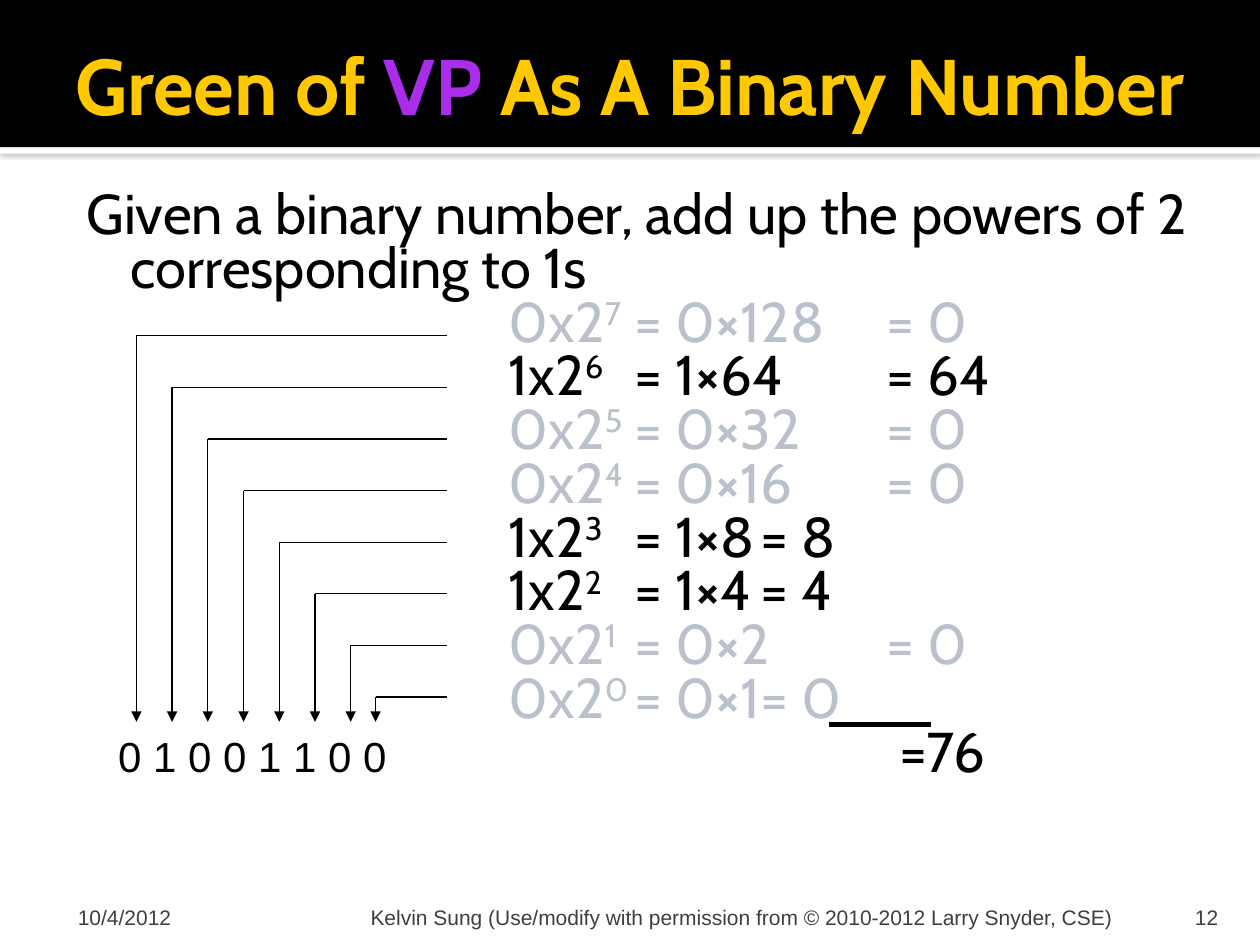
from lxml import etree
from pptx import Presentation, util as u
from pptx.dml.color import RGBColor
from pptx.enum import shapes, text
from pptx.oxml import parse_xml
from pptx.oxml.ns import nsdecls, qn

BLACK = RGBColor(0x00, 0x00, 0x00)
WHITE = RGBColor(0xFF, 0xFF, 0xFF)
GOLD = RGBColor(0xFF, 0xC8, 0x00)
PURPLE = RGBColor(0xA9, 0x2D, 0xEA)
PALE = RGBColor(0xBA, 0xC0, 0xCC)
GREY = RGBColor(0x3F, 0x3F, 0x3F)

BITS = "01001100"
LEAD_TABS = "\t" * 4


def place(shape, left, top, width, height):
    shape.left, shape.top = u.Cm(left), u.Cm(top)
    shape.width, shape.height = u.Cm(width), u.Cm(height)


def set_frame(shape, anchor, insets):
    frame = shape.text_frame
    frame.word_wrap = True
    frame.auto_size = text.MSO_AUTO_SIZE.NONE
    frame.vertical_anchor = anchor
    (frame.margin_left, frame.margin_top,
     frame.margin_right, frame.margin_bottom) = map(u.Cm, insets)
    return frame


def add_run(paragraph, words, size, color, font="Cabin", bold=False, raised=False):
    run = paragraph.add_run()
    run.text = words
    run.font.size, run.font.name, run.font.bold = u.Pt(size), font, bold
    run.font.color.rgb = color
    if raised:
        run._r.get_or_add_rPr().set("baseline", "30000")


def add_band(slide, top, height, color):
    band = slide.shapes.add_shape(shapes.MSO_SHAPE.RECTANGLE, 0, u.Cm(top),
                                  u.Cm(25.4), u.Cm(height))
    band.fill.solid()
    band.fill.fore_color.rgb = color
    band.line.fill.background()
    band.shadow.inherit = False
    return band


def add_soft_shadow(band):
    effects = band._element.spPr.find(qn("a:effectLst"))
    effects.append(parse_xml(
        f'<a:outerShdw {nsdecls("a")} blurRad="{u.Pt(2.5)}" dist="{u.Pt(0.8)}" '
        'dir="5400000" rotWithShape="0"><a:srgbClr val="808080">'
        '<a:alpha val="60000"/></a:srgbClr></a:outerShdw>'))


def add_line(parent, start, end, width=0.75, arrow=False):
    line = parent.shapes.add_connector(shapes.MSO_CONNECTOR.STRAIGHT,
                                       *map(u.Cm, (*start, *end)))
    line.line.color.rgb = BLACK
    line.line.width = u.Pt(width)
    if arrow:
        etree.SubElement(line.line._get_or_add_ln(), qn("a:headEnd"), type="triangle")
    etree.SubElement(line._element.spPr, qn("a:effectLst"))


def add_footer(slide, words, box, insets, align=text.PP_ALIGN.LEFT):
    footer = slide.shapes.add_textbox(*map(u.Cm, box))
    paragraph = set_frame(footer, text.MSO_ANCHOR.BOTTOM, insets).paragraphs[0]
    paragraph.alignment = align
    add_run(paragraph, words, 12, GREY, "Arial")


def format_body_line(paragraph, first_indent=-0.89):
    paragraph.line_spacing = 0.8
    paragraph.space_before = u.Pt(0)
    properties = paragraph._p.get_or_add_pPr()
    properties.set("marL", str(u.Cm(1.22)))
    properties.set("indent", str(u.Cm(first_indent)))
    properties.set("defTabSz", str(u.Cm(2.54)))
    etree.SubElement(properties, qn("a:buNone"))


def fill_title(title):
    place(title, 1.27, 0.43, 22.86, 2.54)
    frame = set_frame(title, text.MSO_ANCHOR.MIDDLE, (0.25, 0.13, 0.13, 0.13))
    heading = frame.paragraphs[0]
    heading.alignment = text.PP_ALIGN.LEFT
    for words, color in (("Green of ", GOLD), ("VP", PURPLE),
                         (" As A Binary Number", GOLD)):
        add_run(heading, words, 45, color, bold=True)


def fill_body(body):
    place(body, 1.27, 3.61, 23.5, 12.8)
    frame = set_frame(body, text.MSO_ANCHOR.TOP, (0.15, 0.25, 0.25, 0.13))
    intro = frame.paragraphs[0]
    format_body_line(intro)
    add_run(intro, "Given a binary number, add up the powers of 2 corresponding to 1s",
            32, BLACK)

    # One product for each bit, highest power first
    for power, bit in zip(reversed(range(len(BITS))), BITS):
        product = frame.add_paragraph()
        format_body_line(product)
        color = BLACK if bit == "1" else PALE
        value = 2 ** power
        add_run(product, f"{LEAD_TABS}{bit}x2", 32, color)
        add_run(product, str(power), 32, color, raised=True)
        add_run(product, f"\t= {bit}", 32, color)
        add_run(product, "×", 32, color, bold=True)
        add_run(product, f"{value}\t= {int(bit) * value}", 32, color)

    # The binary number and its sum
    total = frame.add_paragraph()
    format_body_line(total, first_indent=-0.26)
    add_run(total, " ".join(BITS), 24, BLACK, "Arial")
    add_run(total, f"{LEAD_TABS} ={int(BITS, 2)}", 32, BLACK)


def add_bit_arrows(slide):
    arrows = slide.shapes.add_group_shape()
    bit_xs = [2.75 + 0.72 * i for i in range(len(BITS) - 1)] + [7.57]
    for i, x in enumerate(bit_xs):
        y = 6.77 + 1.04 * i
        add_line(arrows, (x, 14.55), (x, y), arrow=True)
        add_line(arrows, (x, y), (9.02, y))


def main():
    deck = Presentation()
    deck.slide_width, deck.slide_height = u.Cm(25.4), u.Cm(19.05)
    slide = deck.slides.add_slide(deck.slide_layouts[1])
    title, body = slide.placeholders

    # Header bands, behind the title and body
    add_soft_shadow(add_band(slide, 2.97, 0.13, WHITE))
    add_band(slide, 0, 2.97, BLACK)
    for placeholder in (title, body):
        slide.shapes._spTree.append(placeholder._element)

    fill_title(title)
    fill_body(body)

    # Arrows from the products to the bits, and the sum line
    add_bit_arrows(slide)
    add_line(slide, (18.77, 14.6), (16.71, 14.6), width=3)

    # Footer
    add_footer(slide, "10/4/2012", (1.27, 17.98, 5.92, 0.76), (0.3, 0.13, 0.13, 0))
    add_footer(slide, "Kelvin Sung (Use/modify with permission from "
               "© 2010-2012 Larry Snyder, CSE)",
               (7.34, 17.98, 15.29, 0.76), (0.13, 0.13, 0.13, 0))
    add_footer(slide, "12", (22.78, 17.98, 2.03, 0.76), (0.25, 0.13, 0.25, 0),
               text.PP_ALIGN.RIGHT)

    deck.save("out.pptx")


if __name__ == "__main__":
    main()
